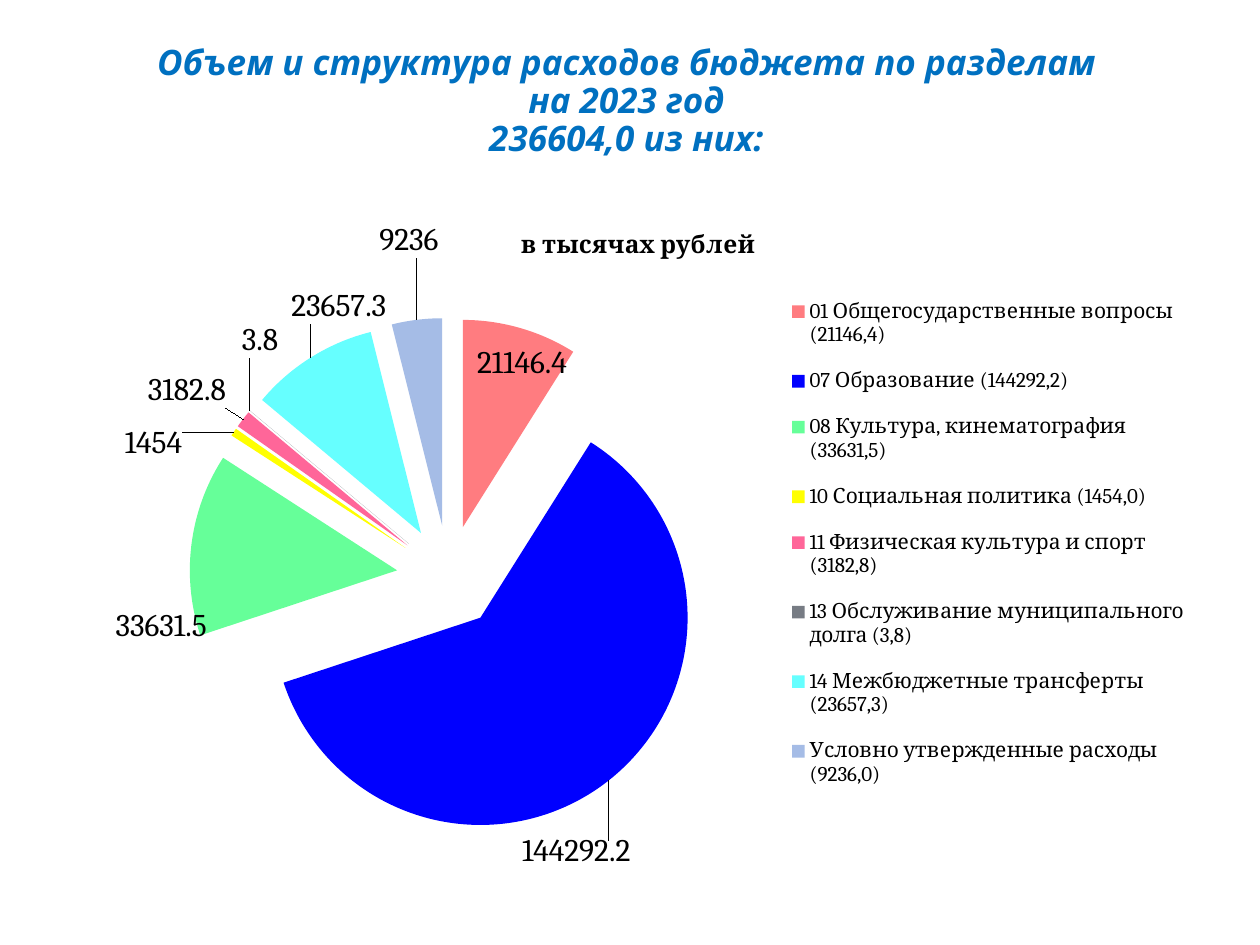
from typing import NamedTuple

from lxml.etree import SubElement
from pptx import Presentation
from pptx.chart.data import CategoryChartData
from pptx.dml.color import RGBColor
from pptx.enum.chart import XL_CHART_TYPE as ChartType
from pptx.enum.chart import XL_LABEL_POSITION as LabelPos
from pptx.enum.chart import XL_LEGEND_POSITION as LegendPos
from pptx.enum.text import MSO_ANCHOR as Anchor
from pptx.enum.text import PP_ALIGN as Align
from pptx.oxml.ns import qn
from pptx.util import Pt

COLORS = {
    "title": "0070C0",
    "text": "000000",
    "coral": "FF7C80",
    "blue": "0000FF",
    "green": "66FF99",
    "yellow": "FFFF00",
    "pink": "FF6699",
    "gray": "777C84",
    "cyan": "66FFFF",
    "lavender": "7598D9",
}
SERIES = "в тысячах рублей"


class Section(NamedTuple):
    name: str
    value: float
    color: str
    dx: float  # label offset, as a share of the chart width
    dy: float  # label offset, as a share of the chart height
    brightness: float = 0


SECTIONS = [
    Section("01 Общегосударственные вопросы (21146,4)", 21146.4, "coral", -0.04, 0.09),
    Section("07 Образование (144292,2)", 144292.2, "blue", -0.08, 0.08),
    Section("08 Культура, кинематография (33631,5)", 33631.5, "green", 0.02, 0.15),
    Section("10 Социальная политика (1454,0)", 1454, "yellow", -0.04, 0.05),
    Section("11 Физическая культура и спорт (3182,8)", 3182.8, "pink", -0.01, -0.01),
    Section("13 Обслуживание муниципального долга (3,8)", 3.8, "gray", 0.03, -0.07),
    Section("14 Межбюджетные трансферты (23657,3)", 23657.3, "cyan", 0.07, -0.04),
    Section("Условно утвержденные расходы (9236,0)", 9236, "lavender", 0.02, -0.08, 0.35),
]


def rgb(name: str) -> RGBColor:
    return RGBColor.from_string(COLORS[name])


def set_layout(parent, before, **values) -> None:
    """Place a chart part by hand; its layout follows the element `before`."""
    for old in parent.findall(qn("c:layout")):
        parent.remove(old)
    layout = SubElement(parent, qn("c:layout"))
    manual = SubElement(layout, qn("c:manualLayout"))
    for tag, value in values.items():
        SubElement(manual, qn(f"c:{tag}")).set("val", str(value))
    if before is None:
        parent.insert(0, layout)
    else:
        before.addnext(layout)


def add_title(slide, text: str) -> None:
    sp = slide.shapes.add_textbox(Pt(34), Pt(16.5), Pt(648), Pt(84))
    tf = sp.text_frame
    tf.word_wrap = True
    tf.vertical_anchor = Anchor.MIDDLE
    p = tf.paragraphs[0]
    p.text = text
    p.alignment = Align.CENTER
    p.line_spacing = 0.9
    for r in p.runs:
        r.font.name = "Noto Sans"
        r.font.size = Pt(20)
        r.font.bold = r.font.italic = True
        r.font.color.rgb = rgb("title")


def style_slice(series, index: int, section: Section) -> None:
    point = series.points[index]
    fill = point.format.fill
    fill.solid()
    fill.fore_color.rgb = rgb(section.color)
    if section.brightness:
        fill.fore_color.brightness = section.brightness
    point.format.line.fill.background()
    point.data_label.position = LabelPos.OUTSIDE_END
    labels = series.data_labels._element
    label = labels.findall(qn("c:dLbl"))[index]
    set_layout(label, label.find(qn("c:idx")), x=section.dx, y=section.dy)


def add_pie(slide, sections: list[Section]) -> None:
    data = CategoryChartData()
    data.categories = [s.name for s in sections]
    data.add_series(SERIES, [s.value for s in sections])
    chart = slide.shapes.add_chart(
        ChartType.PIE, Pt(36), Pt(112.5), Pt(648), Pt(384.5), data
    ).chart
    chart.font.name = "Cambria"
    chart.font.size = Pt(18)
    chart.font.color.rgb = rgb("text")

    # Chart title
    chart.has_title = True
    tf = chart.chart_title.text_frame
    tf.text = SERIES
    font = tf.paragraphs[0].runs[0].font
    font.name = "Cambria"
    font.size = Pt(14)
    font.bold = True
    font.color.rgb = rgb("text")
    title = chart.chart_title._element
    set_layout(title, title.find(qn("c:tx")), xMode="edge", yMode="edge", x=0.4, y=0.04)

    # Legend
    chart.has_legend = True
    legend = chart.legend
    legend.position = LegendPos.RIGHT
    legend.include_in_layout = False
    legend.font.name = "Cambria"
    legend.font.size = Pt(12)
    legend.font.color.rgb = rgb("text")
    set_layout(
        legend._element, legend._element.find(qn("c:legendPos")),
        xMode="edge", yMode="edge", x=0.65, y=0.12, w=0.35, h=0.79,
    )

    # Pie with pulled-out slices and value labels
    plot = chart.plots[0]
    plot.vary_by_categories = True
    set_layout(
        plot._element.getparent(), None, layoutTarget="inner",
        xMode="edge", yMode="edge", x=0.11, y=0.18, w=0.46, h=0.77,
    )
    series = plot.series[0]
    ser = series._element
    explosion = SubElement(ser, qn("c:explosion"))
    explosion.set("val", "25")
    ser.find(qn("c:tx")).addnext(explosion)
    series.data_labels.show_value = True
    for index, section in enumerate(sections):
        style_slice(series, index, section)


def main() -> None:
    prs = Presentation()
    prs.slide_width, prs.slide_height = Pt(720), Pt(540)
    slide = prs.slides.add_slide(prs.slide_layouts[6])
    add_title(
        slide,
        "Объем и структура расходов бюджета по разделам\vна 2023 год\v236604,0 из них:",
    )
    add_pie(slide, SECTIONS)
    prs.save("out.pptx")


if __name__ == "__main__":
    main()
